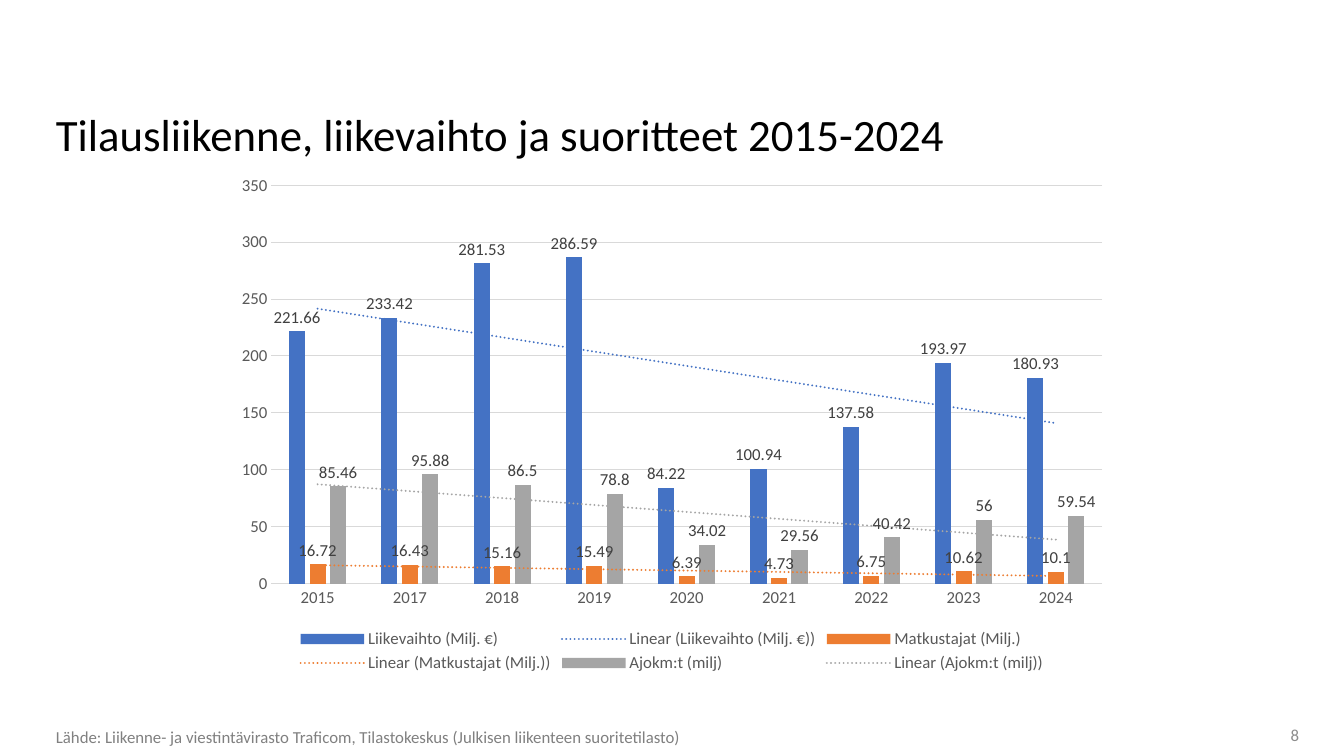
from lxml import etree
from pptx import Presentation
from pptx import util as u
from pptx.chart.data import CategoryChartData
from pptx.dml.color import RGBColor
from pptx.enum import chart as charts, dml, text
from pptx.oxml import parse_xml
from pptx.oxml.ns import nsdecls, qn

SCALE = 12192000 / 1344
FONT = "Calibri"
YEARS = ["2015", "2017", "2018", "2019", "2020", "2021", "2022", "2023", "2024"]
SERIES = [
    ("Liikevaihto (Milj. €)", "4472C4",
     [221.66, 233.42, 281.53, 286.59, 84.22, 100.94, 137.58, 193.97, 180.93]),
    ("Matkustajat (Milj.)", "ED7D31",
     [16.72, 16.43, 15.16, 15.49, 6.39, 4.73, 6.75, 10.62, 10.1]),
    ("Ajokm:t (milj)", "A5A5A5",
     [85.46, 95.88, 86.5, 78.8, 34.02, 29.56, 40.42, 56, 59.54]),
]


def px(length):
    return u.Emu(round(length * SCALE))


def color(value):
    return RGBColor.from_string(value)


def set_font(font, size, value):
    font.name = FONT
    font.size = u.Pt(size)
    font.color.rgb = color(value)


def set_line(line, value, width):
    line.color.rgb = color(value)
    line.width = u.Pt(width)


def add_text(page, area, words, size, value, anchor=text.MSO_ANCHOR.MIDDLE,
             align=text.PP_ALIGN.LEFT, spacing=1.0, right_inset=10):
    box = page.shapes.add_textbox(*map(px, area))
    frame = box.text_frame
    frame.word_wrap = True
    frame.vertical_anchor = anchor
    frame.margin_right = px(right_inset)
    para = frame.paragraphs[0]
    para.text = words
    para.alignment = align
    para.line_spacing = spacing
    set_font(para.font, size, value)


def add_trendline(series, value):
    trendline = parse_xml(f"<c:trendline {nsdecls('c')}/>")
    series._element.find(qn("c:cat")).addprevious(trendline)
    properties = etree.SubElement(trendline, qn("c:spPr"))
    line = etree.SubElement(properties, qn("a:ln"), w=str(u.Pt(1.5)), cap="rnd")
    fill = etree.SubElement(line, qn("a:solidFill"))
    etree.SubElement(fill, qn("a:srgbClr"), val=value)
    etree.SubElement(line, qn("a:prstDash"), val="sysDot")
    for tag, setting in (("trendlineType", "linear"), ("dispRSqr", "0"), ("dispEq", "0")):
        etree.SubElement(trendline, qn(f"c:{tag}"), val=setting)


def style_series(series, value):
    series.format.fill.solid()
    series.format.fill.fore_color.rgb = color(value)
    series.invert_if_negative = False
    labels = series.data_labels
    labels.show_value = True
    labels.position = charts.XL_LABEL_POSITION.OUTSIDE_END
    set_font(labels.font, 12, "404040")
    add_trendline(series, value)


def style_axes(chart):
    for axis in (chart.category_axis, chart.value_axis):
        axis.major_tick_mark = axis.minor_tick_mark = charts.XL_TICK_MARK.NONE
        set_font(axis.tick_labels.font, 12, "595959")
    set_line(chart.category_axis.format.line, "D9D9D9", 0.75)
    values = chart.value_axis
    values.minimum_scale, values.maximum_scale, values.major_unit = 0, 350, 50
    values.format.line.fill.background()
    set_line(values.major_gridlines.format.line, "D9D9D9", 0.75)


def add_traffic_chart(page, area):
    data = CategoryChartData()
    data.categories = YEARS
    for name, _, values in SERIES:
        data.add_series(name, values)
    chart = page.shapes.add_chart(
        charts.XL_CHART_TYPE.COLUMN_CLUSTERED, *map(px, area), data).chart
    set_font(chart.font, 10, "000000")
    chart.has_title = False
    chart.has_legend = True
    chart.legend.position = charts.XL_LEGEND_POSITION.BOTTOM
    chart.legend.include_in_layout = False
    set_font(chart.legend.font, 12, "595959")
    style_axes(chart)
    plot = chart.plots[0]
    plot.vary_by_categories = False
    plot.gap_width = 219
    plot.overlap = -27
    for series, (_, value, _) in zip(plot.series, SERIES):
        style_series(series, value)


def main():
    deck = Presentation()
    deck.slide_width, deck.slide_height = px(1344), px(756)
    page = deck.slides.add_slide(deck.slide_layouts[6])
    add_text(page, (1215, 720, 84, 30), "8", 12, "8C8C8C",
             align=text.PP_ALIGN.RIGHT, right_inset=0)
    add_text(page, (46, 101, 1252, 64),
             "Tilausliikenne, liikevaihto ja suoritteet 2015-2024",
             32, "000000", anchor=text.MSO_ANCHOR.BOTTOM)
    add_text(page, (46, 725, 1190, 26),
             "Lähde: Liikenne- ja viestintävirasto Traficom, "
             "Tilastokeskus (Julkisen liikenteen suoritetilasto)",
             12, "808080", spacing=0.9)
    add_traffic_chart(page, (224, 165, 896, 512))
    deck.save("out.pptx")


if __name__ == "__main__":
    main()
